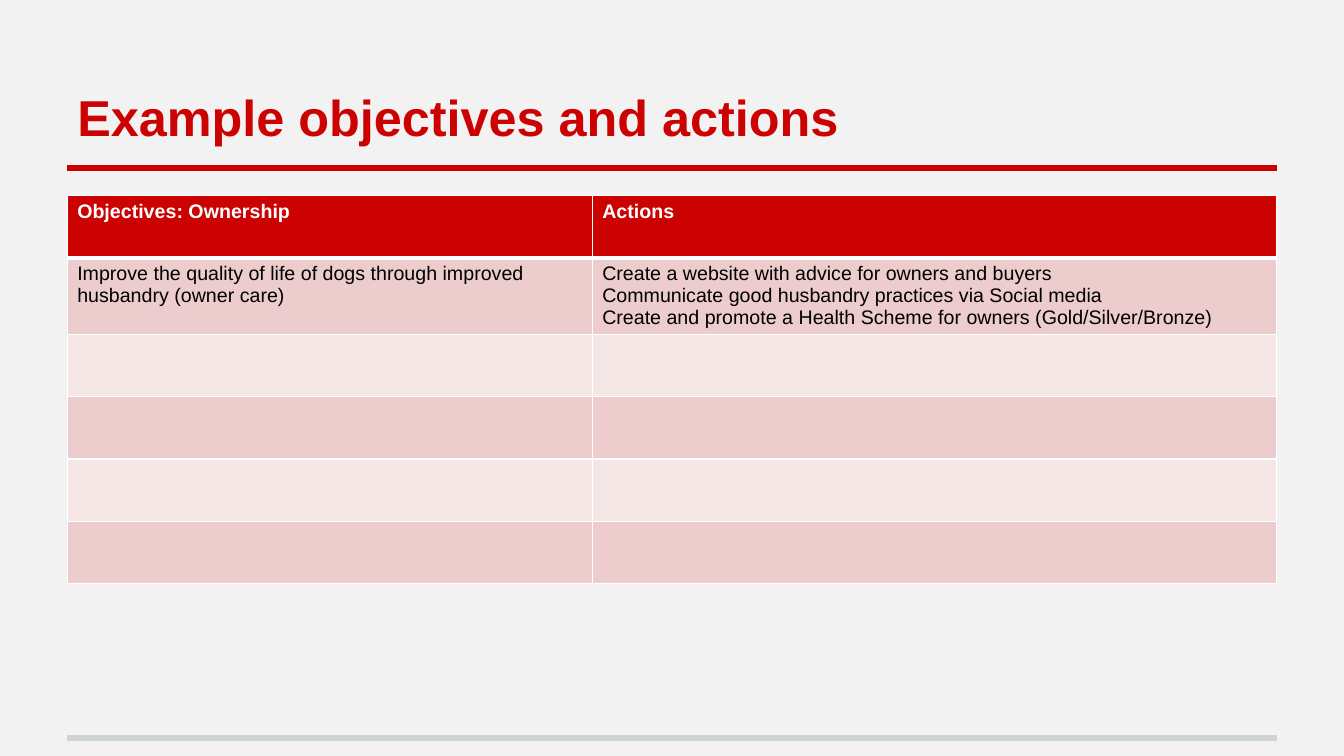
from lxml import etree
from pptx import Presentation
from pptx.dml.color import RGBColor
from pptx.enum.shapes import MSO_CONNECTOR
from pptx.enum.text import MSO_ANCHOR, MSO_AUTO_SIZE, PP_ALIGN
from pptx.oxml.ns import qn
from pptx.util import Pt

STRAIGHT = MSO_CONNECTOR.STRAIGHT
BOTTOM = MSO_ANCHOR.BOTTOM
NO_AUTOFIT = MSO_AUTO_SIZE.NONE
LEFT = PP_ALIGN.LEFT

RED = RGBColor(0xCC, 0x02, 0x02)
GREY = RGBColor(0xCF, 0xD4, 0xD4)
PAPER = RGBColor(0xF2, 0xF2, 0xF2)
WHITE = RGBColor(0xFF, 0xFF, 0xFF)
BLACK = RGBColor(0, 0, 0)
ROSE = RGBColor(0xEC, 0xCC, 0xCC)
PALE_ROSE = RGBColor(0xF6, 0xE7, 0xE7)

MARGIN = 48
CONTENT_WIDTH = 864
COLUMN_WIDTHS = (375, 489)
ROW_HEIGHT = 44.6
PLAN = [
    ("Objectives: Ownership", "Actions"),
    (
        "Improve the quality of life of dogs through improved husbandry (owner care)",
        "Create a website with advice for owners and buyers\n"
        "Communicate good husbandry practices via Social media\n"
        "Create and promote a Health Scheme for owners (Gold/Silver/Bronze)",
    ),
] + [("", "")] * 4


class SlideBuilder:
    font = "Arial"
    title_size = 36
    table_size = 14

    def __init__(self, slide):
        self.slide = slide
        background = slide.background.fill
        background.solid()
        background.fore_color.rgb = PAPER

    def format_text(self, frame, size, color, bold):
        for paragraph in frame.paragraphs:
            paragraph.alignment = LEFT
            for run in paragraph.runs:
                run.font.name = self.font
                run.font.size = Pt(size)
                run.font.bold = bold
                run.font.color.rgb = color

    def title(self, text, top, height):
        heading = self.slide.shapes.title
        heading.left, heading.top = Pt(MARGIN), Pt(top)
        heading.width, heading.height = Pt(CONTENT_WIDTH), Pt(height)
        frame = heading.text_frame
        frame.text = text
        frame.auto_size = NO_AUTOFIT
        frame.vertical_anchor = BOTTOM
        frame.margin_left = frame.margin_right = Pt(7.2)
        frame.margin_top = frame.margin_bottom = Pt(7.2)
        self.format_text(frame, self.title_size, RED, True)

    def rule(self, y, color):
        rule = self.slide.shapes.add_connector(
            STRAIGHT, Pt(MARGIN), Pt(y), Pt(MARGIN + CONTENT_WIDTH), Pt(y)
        )
        rule.line.color.rgb = color
        rule.line.width = Pt(4)
        etree.SubElement(rule._element.spPr, qn("a:effectLst"))

    def cell_borders(self, cell, widths):
        properties = cell._tc.get_or_add_tcPr()
        for position, (side, width) in enumerate(widths.items()):
            border = etree.Element(qn(f"a:ln{side}"), w=str(Pt(width)))
            fill = etree.SubElement(border, qn("a:solidFill"))
            etree.SubElement(fill, qn("a:srgbClr"), val=str(WHITE))
            properties.insert(position, border)

    def table(self, rows, top):
        table = self.slide.shapes.add_table(
            len(rows), len(COLUMN_WIDTHS), Pt(MARGIN), Pt(top),
            Pt(CONTENT_WIDTH), Pt(ROW_HEIGHT * len(rows)),
        ).table
        for column, width in zip(table.columns, COLUMN_WIDTHS):
            column.width = Pt(width)
        for index, texts in enumerate(rows):
            table.rows[index].height = Pt(ROW_HEIGHT)
            is_header = index == 0
            band = RED if is_header else (PALE_ROSE, ROSE)[index % 2]
            widths = {
                "L": 1,
                "R": 1,
                "T": 3 if index == 1 else 1,
                "B": 3 if is_header else 1,
            }
            for cell, text in zip(table.rows[index].cells, texts):
                cell.fill.solid()
                cell.fill.fore_color.rgb = band
                self.cell_borders(cell, widths)
                cell.text_frame.text = text
                self.format_text(
                    cell.text_frame, self.table_size,
                    WHITE if is_header else BLACK, is_header,
                )


def main():
    presentation = Presentation()
    presentation.slide_width, presentation.slide_height = Pt(960), Pt(540)
    title_only = presentation.slide_layouts[5]
    builder = SlideBuilder(presentation.slides.add_slide(title_only))
    builder.rule(527, GREY)
    builder.rule(120, RED)
    builder.title("Example objectives and actions", 21.6, 90)
    builder.table(PLAN, 139.7)
    presentation.save("out.pptx")


if __name__ == "__main__":
    main()
